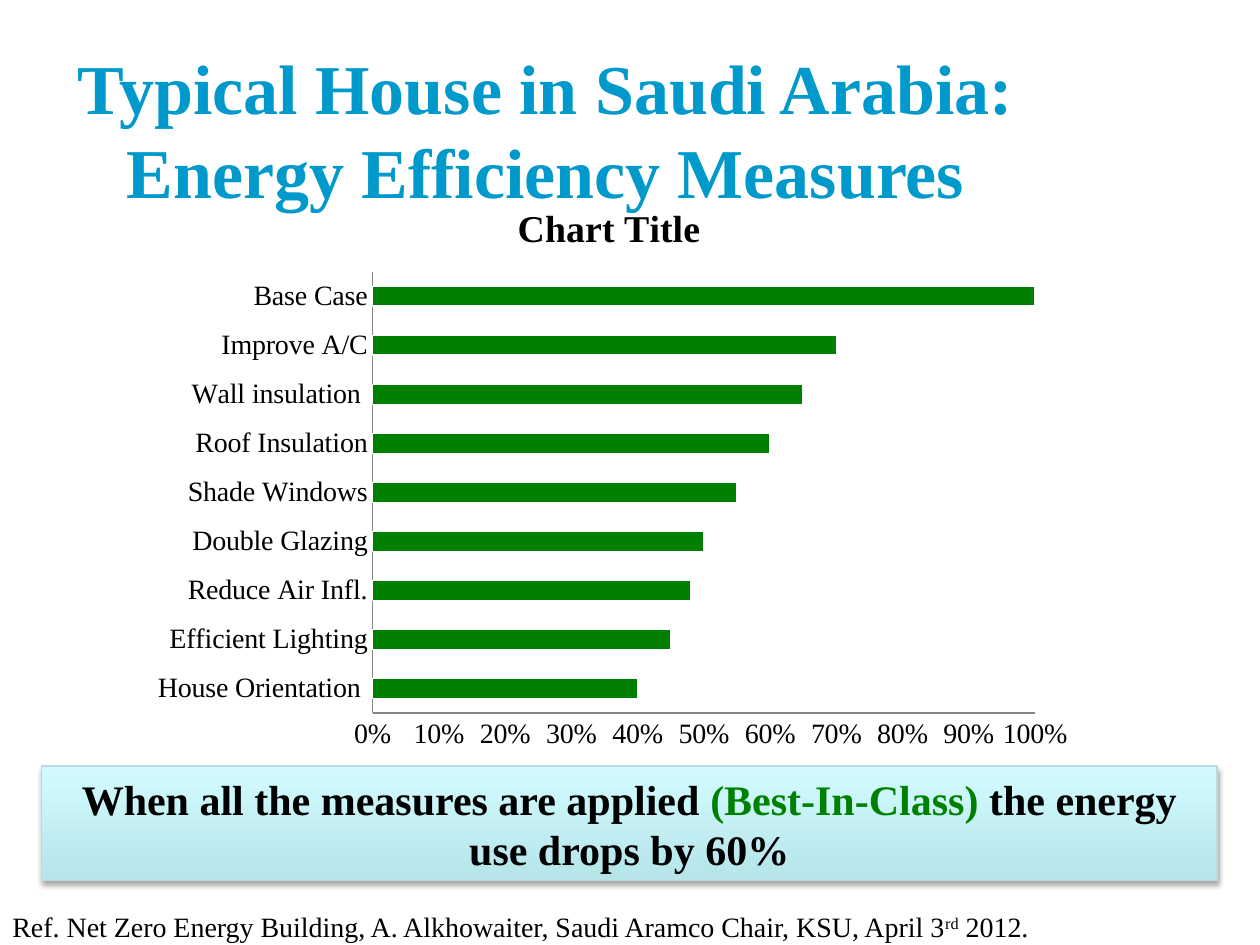
from lxml import etree
from pptx import Presentation
from pptx.chart.data import CategoryChartData
from pptx.dml.color import RGBColor
from pptx.enum.chart import XL_CHART_TYPE, XL_TICK_MARK
from pptx.enum.shapes import MSO_SHAPE
from pptx.enum.text import MSO_ANCHOR, MSO_AUTO_SIZE, PP_ALIGN
from pptx.oxml import parse_xml
from pptx.oxml.ns import nsdecls, qn
from pptx.util import Inches, Pt

BAR = XL_CHART_TYPE.BAR_CLUSTERED
NO_TICK = XL_TICK_MARK.NONE
RECT = MSO_SHAPE.RECTANGLE
TOP, MIDDLE = MSO_ANCHOR.TOP, MSO_ANCHOR.MIDDLE
LEFT, CENTER = PP_ALIGN.LEFT, PP_ALIGN.CENTER
GROW, FIXED = MSO_AUTO_SIZE.SHAPE_TO_FIT_TEXT, MSO_AUTO_SIZE.NONE

FONT = "Times New Roman"
BLACK = RGBColor(0x00, 0x00, 0x00)
WHITE = RGBColor(0xFF, 0xFF, 0xFF)
BLUE = RGBColor(0x00, 0x99, 0xCC)
GREEN = RGBColor(0x00, 0x80, 0x00)
GRAY = RGBColor(0x86, 0x86, 0x86)
DEEP = RGBColor(0xB5, 0xE5, 0xE9)
PALE = RGBColor(0xD3, 0xFB, 0xFF)
EDGE = RGBColor(0xB6, 0xDC, 0xDF)

# Energy use left after each measure, from the bottom bar up
USE = [
    ("House Orientation ", 0.4),
    ("Efficient Lighting", 0.45),
    ("Reduce Air Infl.", 0.48),
    ("Double Glazing", 0.5),
    ("Shade Windows", 0.55),
    ("Roof Insulation", 0.6),
    ("Wall insulation ", 0.65),
    ("Improve A/C", 0.7),
    ("Base Case", 1),
]


def style(font, size, color=BLACK, bold=False):
    font.name = FONT
    font.size = Pt(size)
    font.bold = bold
    font.color.rgb = color


def add_run(para, text, size, color=BLACK, bold=False):
    run = para.add_run()
    run.text = text
    style(run.font, size, color, bold)
    return run


def set_frame(frame, anchor, fit, align):
    frame.word_wrap = True
    frame.auto_size = fit
    frame.vertical_anchor = anchor
    para = frame.paragraphs[0]
    para.alignment = align
    return para


def add_title(slide, box):
    title = slide.shapes.title
    title.left, title.top, title.width, title.height = box
    para = set_frame(title.text_frame, TOP, FIXED, CENTER)
    title.text_frame.margin_top = Inches(0.05)
    add_run(para, "Typical House in Saudi Arabia: Energy Efficiency Measures",
            40, BLUE, True)


def set_plot(chart, **parts):
    """Fix the inner plot area, as fractions of the chart."""
    area = chart._chartSpace.chart.plotArea
    old = area.find(qn("c:layout"))
    if old is not None:
        area.remove(old)
    layout = parse_xml(f"<c:layout {nsdecls('c')}/>")
    manual = etree.SubElement(layout, qn("c:manualLayout"))
    rows = [("layoutTarget", "inner"), ("xMode", "edge"), ("yMode", "edge")]
    for tag, val in rows + list(parts.items()):
        etree.SubElement(manual, qn(f"c:{tag}")).set("val", str(val))
    area.insert(0, layout)


def add_bars(slide, box):
    data = CategoryChartData(number_format="0%")
    data.categories = [name for name, _ in USE]
    data.add_series("Series 1", [value for _, value in USE])
    chart = slide.shapes.add_chart(BAR, *box, data).chart
    style(chart.font, 18)
    chart.has_legend = False
    set_plot(chart, x=0.25, y=0.16, w=0.7, h=0.76)

    # Heading
    chart.has_title = True
    para = chart.chart_title.text_frame.paragraphs[0]
    add_run(para, "Chart Title", 21.6, BLACK, True)
    chart.chart_title.include_in_layout = False

    # Axes
    for axis in (chart.category_axis, chart.value_axis):
        axis.major_tick_mark = axis.minor_tick_mark = NO_TICK
        axis.has_major_gridlines = False
        axis.format.line.color.rgb = GRAY
        axis.format.line.width = Pt(0.75)
        style(axis.tick_labels.font, 16)
    scale = chart.value_axis
    scale.minimum_scale, scale.maximum_scale = 0, 1
    scale.major_unit = 0.1
    scale.tick_labels.number_format = "0%"
    scale.tick_labels.number_format_is_linked = False

    # Bars
    plot = chart.plots[0]
    plot.gap_width = 150
    plot.vary_by_categories = False
    form = plot.series[0].format
    form.fill.solid()
    form.fill.fore_color.rgb = GREEN
    form.line.color.rgb = WHITE
    form.line.width = Pt(0.75)


def add_shade(shape):
    shape._element.spPr.append(parse_xml(
        f'<a:effectLst {nsdecls("a")}>'
        f'<a:outerShdw blurRad="{Pt(3.1)}" dist="{Pt(1.8)}" dir="5400000" '
        'rotWithShape="0"><a:srgbClr val="000000"><a:alpha val="35000"/>'
        '</a:srgbClr></a:outerShdw></a:effectLst>'))


def add_banner(slide, box):
    shape = slide.shapes.add_shape(RECT, *box)
    shape.fill.gradient()
    shape.fill.gradient_angle = 90
    for stop, color in zip(shape.fill.gradient_stops, (DEEP, PALE)):
        stop.color.rgb = color
    shape.line.color.rgb = EDGE
    shape.line.width = Pt(0.75)
    add_shade(shape)
    para = set_frame(shape.text_frame, MIDDLE, GROW, CENTER)
    add_run(para, "When all the measures are applied ", 24, BLACK, True)
    add_run(para, "(Best-In-Class) ", 24, GREEN, True)
    add_run(para, "the energy use drops by 60%", 24, BLACK, True)


def add_source(slide, box):
    frame = slide.shapes.add_textbox(*box).text_frame
    para = set_frame(frame, TOP, GROW, LEFT)
    add_run(para, "Ref. Net Zero Energy Building, A. Alkhowaiter, "
            "Saudi Aramco Chair, KSU, April 3", 16)
    raised = add_run(para, "rd", 16)
    raised.font._element.set("baseline", "30000")
    add_run(para, " 2012.", 16)


def to_box(*sides):
    return [Inches(side) for side in sides]


def main():
    deck = Presentation()
    deck.slide_width, deck.slide_height = Inches(10), Inches(7.5)
    slide = deck.slides.add_slide(deck.slide_layouts.get_by_name("Title Only"))
    add_title(slide, to_box(0.33, 0.3, 8, 1.25))
    add_bars(slide, to_box(1.08, 1.42, 7.51, 4.61))
    add_banner(slide, to_box(0.33, 6.08, 9.33, 0.91))
    add_source(slide, to_box(0, 7.17, 9.08, 0.37))
    deck.save("out.pptx")


if __name__ == "__main__":
    main()
